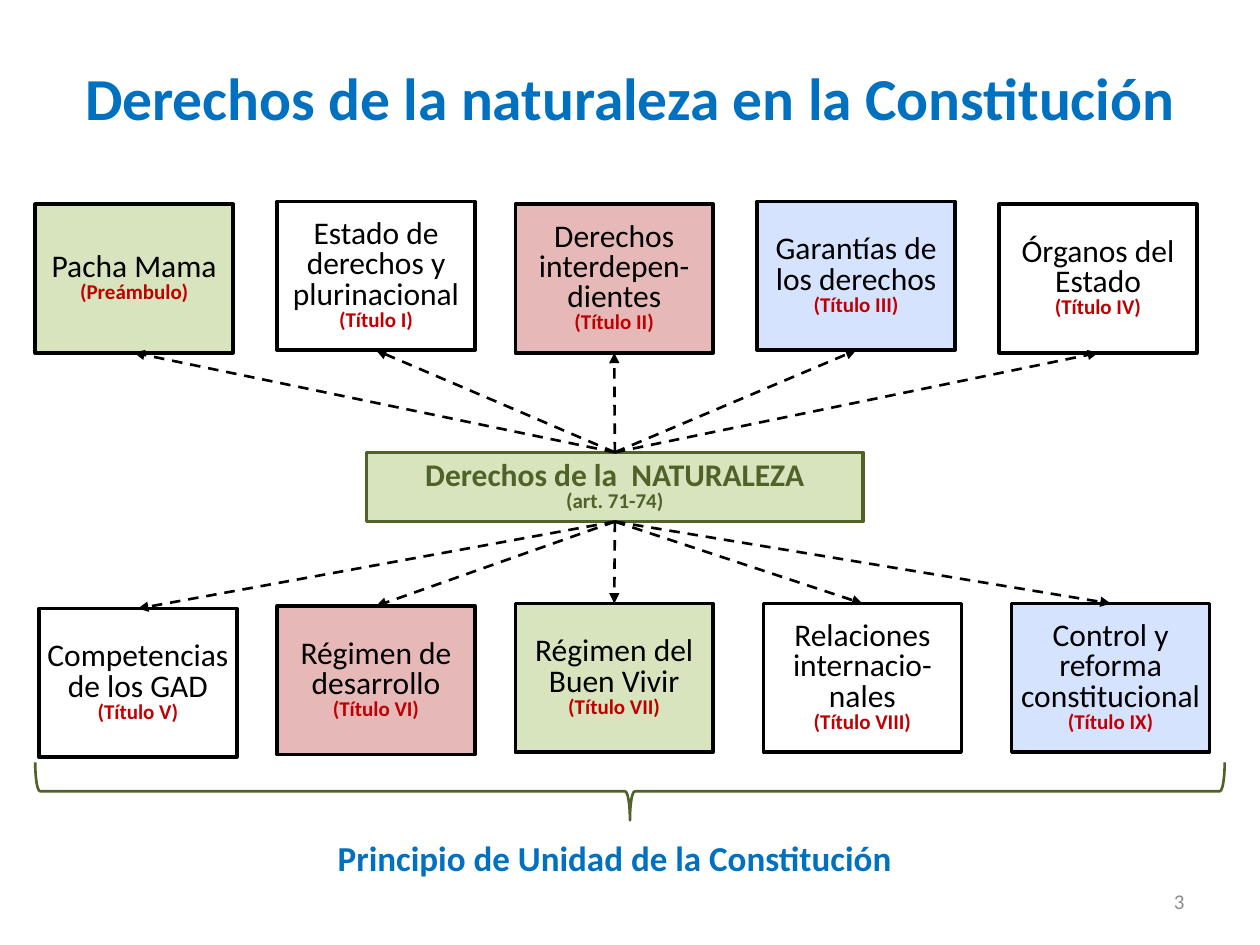
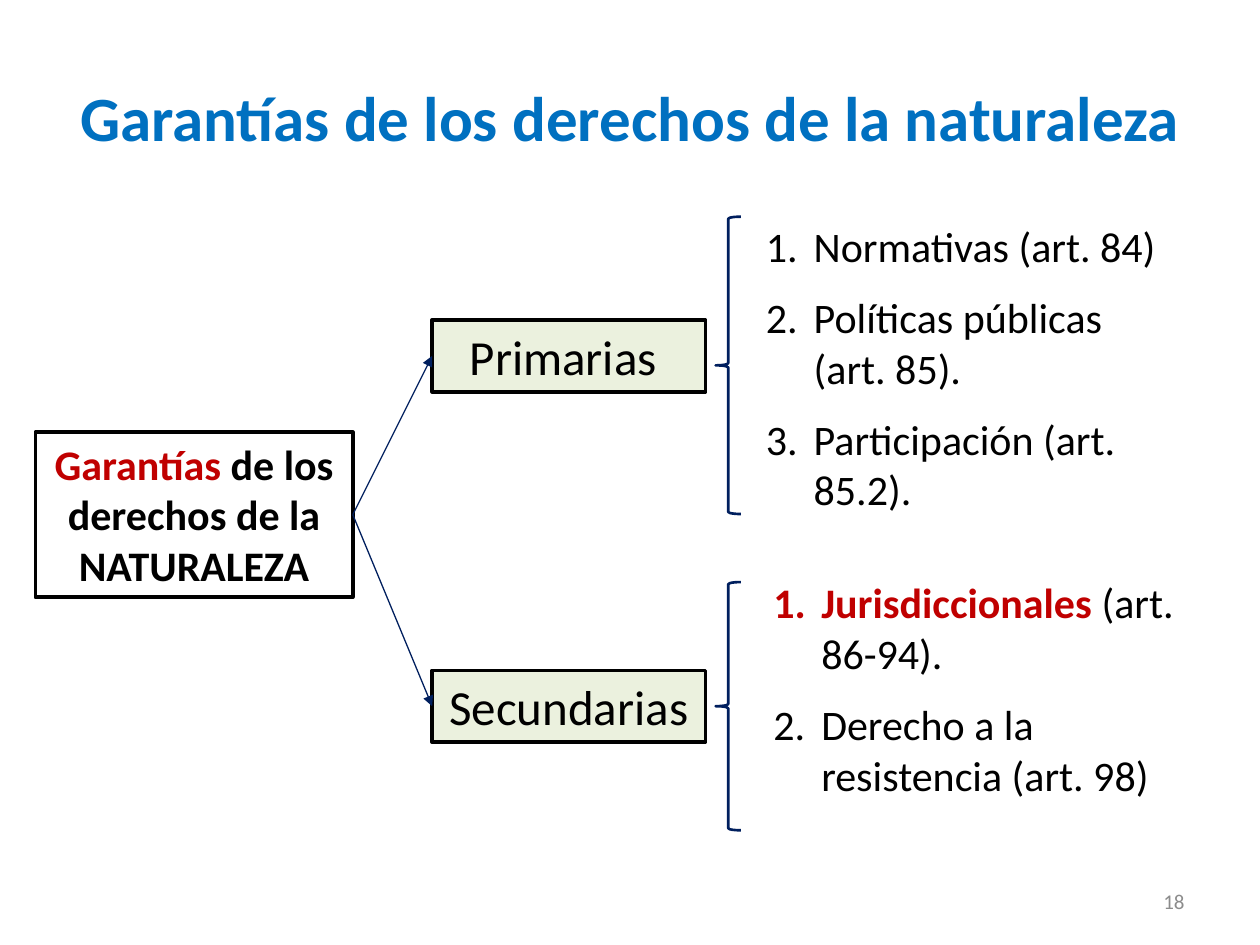
from lxml import etree
from pptx import Presentation
from pptx.dml.color import RGBColor
from pptx.enum.dml import MSO_LINE
from pptx.enum.shapes import MSO_CONNECTOR, MSO_SHAPE
from pptx.enum.text import MSO_ANCHOR, PP_ALIGN
from pptx.oxml.ns import qn
from pptx.util import Inches, Pt

RECT, BRACE = MSO_SHAPE.RECTANGLE, MSO_SHAPE.LEFT_BRACE
STRAIGHT, DASH = MSO_CONNECTOR.STRAIGHT, MSO_LINE.DASH
LEFT, CENTER, RIGHT = PP_ALIGN.LEFT, PP_ALIGN.CENTER, PP_ALIGN.RIGHT
TOP, MIDDLE = MSO_ANCHOR.TOP, MSO_ANCHOR.MIDDLE
TOP_SIDE, LEFT_SIDE, BOTTOM_SIDE, RIGHT_SIDE = range(4)

FONT = "Calibri"
COLORS = {
    "title": "0070C0", "number": "8C8C8C", "text": "000000", "accent": "C00000",
    "olive": "4F6228", "navy": "001F5E", "white": "FFFFFF", "green": "D7E4BD",
    "pale": "EBF1DE", "rose": "E6B9B8", "blue": "D6E3FF",
}
CARD_W, CARD_H = 1.57, 1.18


def rgb(name):
    return RGBColor.from_string(COLORS[name])


def write(shape, paras, size=18, color="text", bold=False, align=CENTER,
          anchor=TOP, spacing=None, after=0, inset=None, numbered=False):
    """Fill a shape; each paragraph is a list of (text, format changes)."""
    frame = shape.text_frame
    frame.word_wrap = True
    frame.vertical_anchor = anchor
    if inset is not None:
        frame.margin_left = frame.margin_right = Inches(inset)
        frame.margin_top = frame.margin_bottom = Inches(inset)
    for i, parts in enumerate(paras):
        para = frame.paragraphs[0] if i == 0 else frame.add_paragraph()
        para.alignment = align
        para.space_after = Pt(after)
        if spacing:
            para.line_spacing = spacing
        if numbered:
            number(para)
        for text, changes in parts:
            look = {"size": size, "color": color, "bold": bold, **changes}
            run = para.add_run()
            run.text = text
            run.font.name = FONT
            run.font.size = Pt(look["size"])
            run.font.bold = look["bold"]
            run.font.color.rgb = rgb(look["color"])


def number(para):
    props = para._p.get_or_add_pPr()
    props.set("marL", str(Inches(0.38)))
    props.set("indent", str(-Inches(0.38)))
    etree.SubElement(props, qn("a:buFont"), typeface="+mj-lt")
    etree.SubElement(props, qn("a:buAutoNum"), type="arabicPeriod")


def label(slide, box, paras, **look):
    area = slide.shapes.add_textbox(*map(Inches, box))
    write(area, paras, **look)


def panel(slide, box, fill, paras, edge="text", **look):
    shape = slide.shapes.add_shape(RECT, *map(Inches, box))
    shape.shadow.inherit = False
    shape.fill.solid()
    shape.fill.fore_color.rgb = rgb(fill)
    shape.line.color.rgb = rgb(edge)
    shape.line.width = Pt(2)
    write(shape, paras, **look)
    return shape


def brace(slide, box, color, turn=0):
    shape = slide.shapes.add_shape(BRACE, *map(Inches, box))
    shape.shadow.inherit = False
    shape.fill.background()
    shape.line.color.rgb = rgb(color)
    shape.line.width = Pt(1.5)
    shape.rotation = turn


def arrow(slide, start, side, end, end_side, color, width, dash=None):
    line = slide.shapes.add_connector(STRAIGHT, 0, 0, 0, 0)
    line.begin_connect(start, side)
    line.end_connect(end, end_side)
    line.line.color.rgb = rgb(color)
    line.line.width = Pt(width)
    if dash:
        line.line.dash_style = dash
    etree.SubElement(line.line._get_or_add_ln(), qn("a:tailEnd"), type="triangle")
    etree.SubElement(line._element.spPr, qn("a:effectLst"))


def page(deck, title, height, size, num):
    """Add a slide with its title and number."""
    slide = deck.slides.add_slide(deck.slide_layouts[6])
    label(slide, (0.5, 0.3, 9, height), [[(title, {})]], size=size,
          color="title", bold=True, anchor=MIDDLE)
    label(slide, (7.17, 6.95, 2.33, 0.4), [[(num, {})]], size=12,
          color="number", align=RIGHT, anchor=MIDDLE)
    return slide


def cards(slide, hub, row, side, end_side):
    """Place a row of cards and point to each from one side of the hub."""
    for left, top, fill, name, source in row:
        note = (source, {"size": 12, "color": "accent", "bold": True})
        card = panel(slide, (left, top, CARD_W, CARD_H), fill,
                     [[(name, {})], [note]], anchor=MIDDLE, spacing=0.8, inset=0.04)
        arrow(slide, hub, side, card, end_side, "text", 1.5, DASH)


def rights(deck):
    slide = page(deck, "Derechos de la naturaleza en la Constitución", 0.93, 34, "3")
    hub = panel(slide, (2.91, 3.59, 3.94, 0.55), "green",
                [[("Derechos de la  NATURALEZA", {})], [("(art. 71-74)", {"size": 12})]],
                edge="olive", color="olive", bold=True, anchor=MIDDLE, spacing=0.8)
    upper = [
        (0.28, 1.62, "green", "Pacha Mama", "(Preámbulo)"),
        (2.2, 1.6, "white", "Estado de derechos y plurinacional", "(Título I)"),
        (4.09, 1.62, "rose", "Derechos interdepen-dientes", "(Título II)"),
        (6.01, 1.6, "blue", "Garantías de los derechos", "(Título III)"),
        (7.93, 1.62, "white", "Órganos del Estado", "(Título IV)"),
    ]
    lower = [
        (0.31, 4.83, "white", "Competencias de los GAD", "(Título V)"),
        (2.2, 4.81, "rose", "Régimen de desarrollo", "(Título VI)"),
        (4.09, 4.79, "green", "Régimen del Buen Vivir", "(Título VII)"),
        (6.06, 4.79, "white", "Relaciones internacio-nales", "(Título VIII)"),
        (8.03, 4.79, "blue", "Control y reforma constitucional", "(Título IX)"),
    ]
    cards(slide, hub, upper, TOP_SIDE, BOTTOM_SIDE)
    cards(slide, hub, lower, BOTTOM_SIDE, TOP_SIDE)
    brace(slide, (4.77, 1.56, 0.46, 9.44), "olive", turn=270)
    label(slide, (1.73, 6.59, 6.3, 0.44),
          [[("Principio de Unidad de la Constitución", {})]],
          size=20, color="title", bold=True)


def branch(slide, root, top, name, span, box, items):
    """Add one kind of guarantee with its brace and numbered list."""
    kind = panel(slide, (3.43, top, 2.17, 0.57), "pale", [[(name, {})]], size=28)
    arrow(slide, root, RIGHT_SIDE, kind, LEFT_SIDE, "navy", 0.75)
    brace(slide, (5.68, span[0], 0.2, span[1]), "navy")
    label(slide, box, items, size=24, align=LEFT, after=12, numbered=True)


def guards(deck):
    slide = page(deck, "Garantías de los derechos de la naturaleza", 1.25, 36, "18")
    red = {"color": "accent", "bold": True}
    root = panel(slide, (0.28, 3.43, 2.52, 1.31), "white",
                 [[("Garantías", red), (" de los derechos de la NATURALEZA", {})]],
                 size=24, bold=True)
    branch(slide, root, 2.54, "Primarias ", (1.72, 2.36), (5.98, 1.7, 3.46, 2.46),
           [[("Normativas (art. 84)", {})],
            [("Políticas públicas (art. 85).", {})],
            [("Participación (art. 85.2).", {})]])
    branch(slide, root, 5.32, "Secundarias ", (4.62, 1.97), (6.04, 4.53, 3.46, 1.88),
           [[("Jurisdiccionales", red), (" (art. 86-94).", {})],
            [("Derecho a la resistencia (art. 98)", {})]])


def main():
    deck = Presentation()
    deck.slide_width, deck.slide_height = Inches(10), Inches(7.5)
    rights(deck)
    guards(deck)
    deck.save("out.pptx")


if __name__ == "__main__":
    main()
